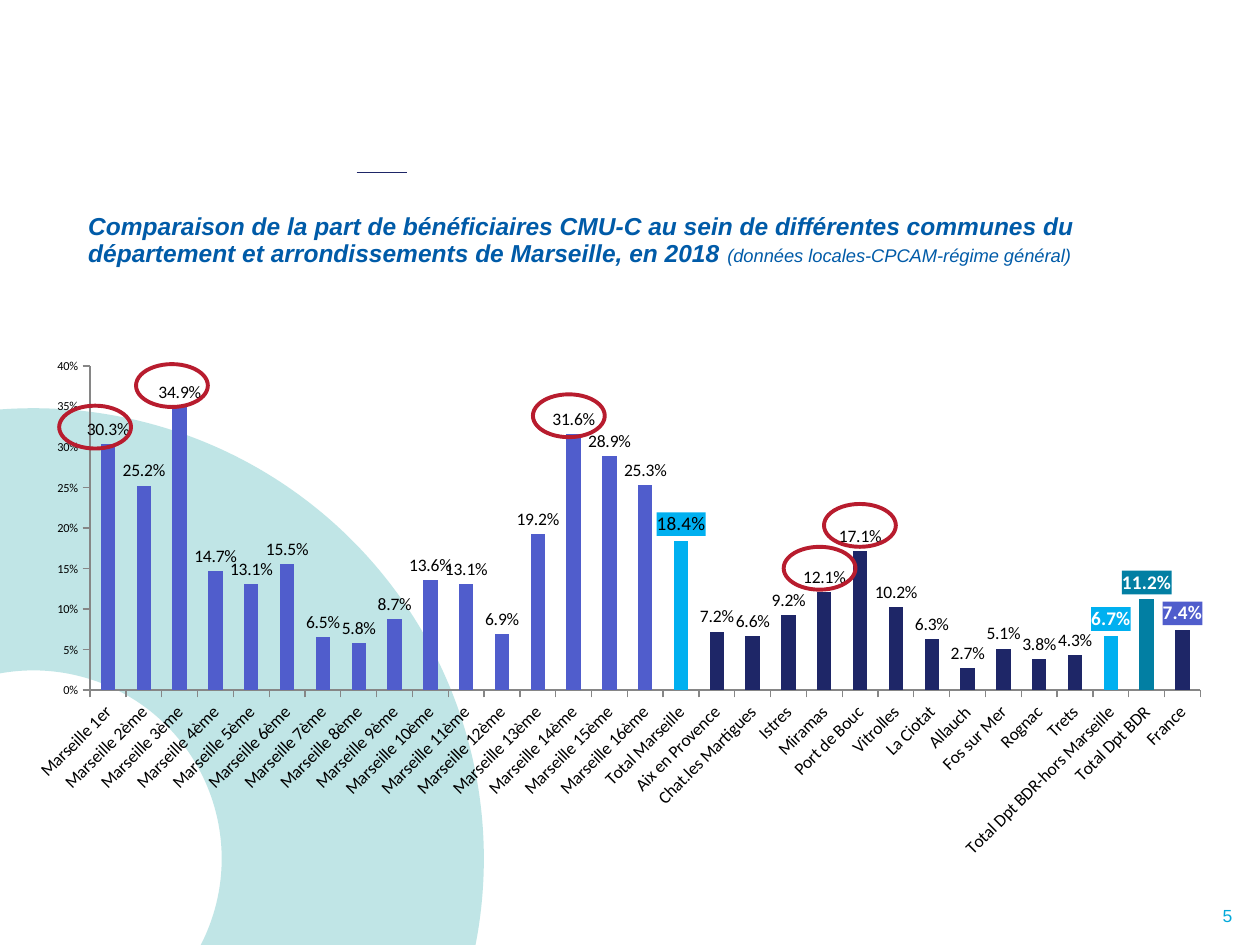
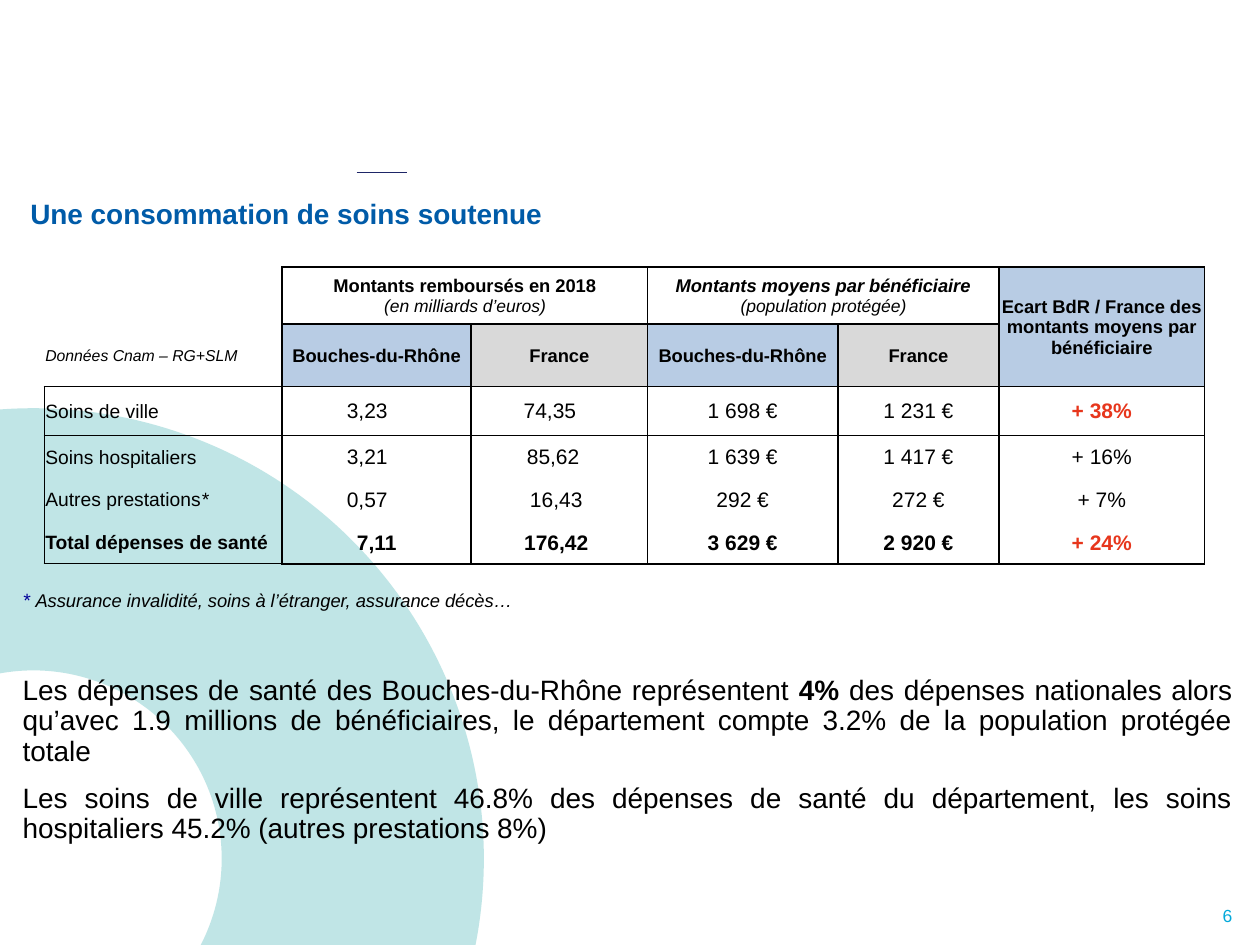
from lxml import etree
from pptx import Presentation
from pptx.chart.data import CategoryChartData
from pptx.dml.color import RGBColor
from pptx.enum.chart import XL_CHART_TYPE, XL_LABEL_POSITION, XL_TICK_MARK
from pptx.enum.shapes import MSO_CONNECTOR, MSO_SHAPE
from pptx.enum.text import MSO_ANCHOR, MSO_AUTO_SIZE, PP_ALIGN
from pptx.oxml.ns import qn
from pptx.util import Inches, Pt

COLUMNS = XL_CHART_TYPE.COLUMN_CLUSTERED
OUTSIDE_END = XL_LABEL_POSITION.OUTSIDE_END
TICK_OUT, TICK_NONE = XL_TICK_MARK.OUTSIDE, XL_TICK_MARK.NONE
DONUT, OVAL, STRAIGHT = MSO_SHAPE.DONUT, MSO_SHAPE.OVAL, MSO_CONNECTOR.STRAIGHT
TOP, MIDDLE, NO_FIT = MSO_ANCHOR.TOP, MSO_ANCHOR.MIDDLE, MSO_AUTO_SIZE.NONE
LEFT, CENTER, RIGHT, JUSTIFY = PP_ALIGN.LEFT, PP_ALIGN.CENTER, PP_ALIGN.RIGHT, PP_ALIGN.JUSTIFY

THEME = {
    "font": "Arial", "chart_font": "Calibri",
    "black": "000000", "white": "FFFFFF", "title": "005BA8", "page": "03A9DA",
    "ring": "5EBEBF", "navy": "1E2667", "district": "505DCC", "total": "00B0F0",
    "department": "027FA3", "circle": "B81C2E", "axis": "868686",
    "blue_cell": "B8CCE4", "grey_cell": "D9D9D9", "alert": "E7361C", "star": "000099",
    "heading": 16, "chart_title": 14, "body": 16, "value": 12, "label": 11,
    "header": 10.5, "small": 10, "source": 9, "axis_size": 7,
}


def rgb(key):
    return RGBColor.from_string(THEME[key])


def write(paragraph, runs, **paragraph_format):
    for attribute, value in paragraph_format.items():
        setattr(paragraph, attribute, value)
    for text, size, color, style in runs:
        run = paragraph.add_run()
        run.text = text
        run.font.color.rgb = rgb(color)
        settings = {"name": THEME["font"], "size": Pt(THEME[size]), "bold": "b" in style, "italic": "i" in style}
        for attribute, value in settings.items():
            setattr(run.font, attribute, value)


prs = Presentation()
prs.slide_width, prs.slide_height = Inches(10), Inches(7.5)
chart_slide = prs.slides.add_slide(prs.slide_layouts[5])
spending_slide = prs.slides.add_slide(prs.slide_layouts[1])

ring = chart_slide.shapes.add_shape(DONUT, Inches(-3.31), Inches(3.24), Inches(7.15), Inches(7.15))
ring.adjustments[0] = 0.291
ring.shadow.inherit = False
ring.line.fill.background()
ring.fill.solid()
ring.fill.fore_color.rgb = rgb("ring")
ring_color = ring._element.spPr.find(qn("a:solidFill"))[0]
etree.SubElement(ring_color, qn("a:alpha"), val="39000")

dash = chart_slide.shapes.add_connector(STRAIGHT, Inches(2.83), Inches(1.37), Inches(3.23), Inches(1.37))
dash.line.color.rgb = rgb("navy")
dash.line.width = Pt(1)
etree.SubElement(dash._element.spPr, qn("a:effectLst"))

master_tree = prs.slide_master.element.cSld.spTree
for shape_id, decoration in enumerate((ring, dash), start=100):
    decoration._element.xpath(".//p:cNvPr")[0].set("id", str(shape_id))
    master_tree.append(decoration._element)

comparison_title = chart_slide.shapes.title
spending_title, spending_body = spending_slide.placeholders
for holder, box, anchor in (
    (comparison_title, (0.7, 1.49, 8.89, 0.85), MIDDLE),
    (spending_title, (0.24, 1.56, 9.5, 0.3), MIDDLE),
    (spending_body, (0.18, 4.69, 9.6, 2.6), TOP),
):
    holder.left, holder.top, holder.width, holder.height = map(Inches, box)
    frame_format = {"margin_left": 0, "margin_right": 0, "margin_top": 0, "margin_bottom": 0,
                    "word_wrap": True, "auto_size": NO_FIT, "vertical_anchor": anchor}
    for attribute, value in frame_format.items():
        setattr(holder.text_frame, attribute, value)

write(comparison_title.text_frame.paragraphs[0], [
    ("Comparaison de la part de bénéficiaires CMU-C au sein de différentes communes du "
     "département et arrondissements de Marseille, en 2018 ", "chart_title", "title", "bi"),
    ("(données locales-CPCAM-régime général)", "header", "title", "i"),
], alignment=LEFT, line_spacing=0.9)

districts = ["Marseille 1er"] + [f"Marseille {number}ème" for number in range(2, 17)]
towns = ["Aix en Provence", "Chat.les Martigues", "Istres", "Miramas", "Port de Bouc", "Vitrolles",
         "La Ciotat", "Allauch", "Fos sur Mer", "Rognac", "Trets"]
shares = CategoryChartData(number_format="0.0%")
shares.categories = districts + ["Total Marseille"] + towns + [
    "Total Dpt BDR-hors Marseille", "Total Dpt BDR", "France"]
shares.add_series("Part CMU-C", [
    0.303, 0.252, 0.349, 0.147, 0.131, 0.155, 0.065, 0.058, 0.087, 0.136, 0.131, 0.069, 0.192, 0.316,
    0.289, 0.253, 0.184, 0.072, 0.066, 0.092, 0.121, 0.171, 0.102, 0.063, 0.027, 0.051, 0.038, 0.043,
    0.067, 0.112, 0.074])
chart = chart_slide.shapes.add_chart(
    COLUMNS, Inches(0.09), Inches(2.76), Inches(9.62), Inches(4.13), shares).chart
chart.has_legend = False
chart.has_title = False
chart.font.name, chart.font.size = THEME["chart_font"], Pt(THEME["small"])
chart.font.color.rgb = rgb("black")

plot_area = chart._chartSpace.chart.plotArea
for old_layout in plot_area.findall(qn("c:layout")):
    plot_area.remove(old_layout)
layout = etree.Element(qn("c:layout"))
plot_area.insert(0, layout)
manual = etree.SubElement(layout, qn("c:manualLayout"))
for tag, value in (("layoutTarget", "inner"), ("xMode", "edge"), ("yMode", "edge"),
                   ("x", "0.065"), ("y", "0.035"), ("w", "0.916"), ("h", "0.623")):
    etree.SubElement(manual, qn(f"c:{tag}"), val=value)

for axis in (chart.category_axis, chart.value_axis):
    axis.has_major_gridlines = False
    axis.major_tick_mark, axis.minor_tick_mark = TICK_OUT, TICK_NONE
    axis.format.line.color.rgb = rgb("axis")
    axis.format.line.width = Pt(0.75)
towns_axis, share_axis = chart.category_axis, chart.value_axis
towns_axis.tick_labels.font.size = Pt(THEME["small"])
towns_axis._element.xpath("c:txPr/a:bodyPr")[0].set("rot", "-2700000")
share_axis.minimum_scale, share_axis.maximum_scale, share_axis.major_unit = 0, 0.4, 0.05
share_axis.tick_labels.font.size = Pt(THEME["axis_size"])
share_axis.tick_labels.number_format = "0%"
share_axis.tick_labels.number_format_is_linked = False

plot = chart.plots[0]
plot.vary_by_categories = False
plot.gap_width = 150
bars = plot.series[0]
bars.format.fill.solid()
bars.format.fill.fore_color.rgb = rgb("navy")
bar_colors = {index: "district" for index in range(len(districts))}
bar_colors.update({16: "total", 28: "total", 29: "department"})
for index, color in bar_colors.items():
    bar_fill = bars.points[index].format.fill
    bar_fill.solid()
    bar_fill.fore_color.rgb = rgb(color)

labels = bars.data_labels
labels.show_value = True
labels.number_format, labels.number_format_is_linked = "0.0%", False
labels.position = OUTSIDE_END
for index, background, color in ((16, "total", "black"), (28, "total", "white"),
                                 (29, "department", "white"), (30, "district", "white")):
    label = bars.points[index].data_label
    label.font.size, label.font.bold = Pt(THEME["label"]), color == "white"
    label.font.color.rgb = rgb(color)
    label.position = OUTSIDE_END
    text_properties = label._dLbl.find(qn("c:txPr"))
    number_format = etree.Element(qn("c:numFmt"), formatCode="0.0%", sourceLinked="0")
    label_shape = etree.Element(qn("c:spPr"))
    label_fill = etree.SubElement(label_shape, qn("a:solidFill"))
    etree.SubElement(label_fill, qn("a:srgbClr"), val=THEME[background])
    text_properties.addprevious(number_format)
    text_properties.addprevious(label_shape)

for left, top in ((0.47, 3.22), (1.08, 2.89), (4.23, 3.13), (6.22, 4.34), (6.54, 4)):
    circle = chart_slide.shapes.add_shape(OVAL, Inches(left), Inches(top), Inches(0.57), Inches(0.34))
    circle.shadow.inherit = False
    circle.fill.background()
    circle.line.color.rgb = rgb("circle")
    circle.line.width = Pt(2.25)

write(spending_title.text_frame.paragraphs[0],
      [("Une consommation de soins soutenue", "heading", "title", "b")], alignment=LEFT, line_spacing=0.9)

commentary = (
    (LEFT, 0, [("* ", "label", "star", "i"),
               ("Assurance invalidité, soins à l’étranger, assurance décès…", "header", "black", "i")]),
    (JUSTIFY, 37, [("Les dépenses de santé des Bouches-du-Rhône représentent ", "body", "black", ""),
                   ("4% ", "body", "black", "b"),
                   ("des dépenses nationales alors qu’avec 1.9 millions de bénéficiaires, le département "
                    "compte 3.2% de la population protégée totale", "body", "black", "")]),
    (JUSTIFY, 10, [("Les soins de ville représentent 46.8% des dépenses de santé du département, "
                    "les soins hospitaliers 45.2% (autres prestations 8%)", "body", "black", "")]),
)
body_frame = spending_body.text_frame
for index, (alignment, gap, runs) in enumerate(commentary):
    paragraph = body_frame.add_paragraph() if index else body_frame.paragraphs[0]
    properties = paragraph._p.get_or_add_pPr()
    properties.set("marL", "0")
    properties.set("indent", "0")
    etree.SubElement(properties, qn("a:buNone"))
    write(paragraph, runs, alignment=alignment, line_spacing=0.9, space_before=Pt(gap))

column_widths = (1.89, 1.5, 1.4, 1.51, 1.28, 1.63)
row_heights = (0.45, 0.47, 0.39, 0.34, 0.34, 0.34)
table_frame = spending_slide.shapes.add_table(
    6, 6, Inches(0.35), Inches(2.12), Inches(sum(column_widths)), Inches(sum(row_heights)))
table = table_frame.table
table._tbl.tblPr.find(qn("a:tableStyleId")).text = "{2D5ABB26-0587-4C30-8999-92F81FD0307C}"
table.first_row = table.horz_banding = False
for column, width in zip(table.columns, column_widths):
    column.width = Inches(width)
for row, height in zip(table.rows, row_heights):
    row.height = Inches(height)
for start, end in (((0, 1), (0, 2)), ((0, 3), (0, 4)), ((0, 5), (1, 5))):
    table.cell(*start).merge(table.cell(*end))

contents = {
    (0, 1): [[("Montants remboursés en 2018", "header", "black", "b")],
             [("(en milliards d’euros)", "small", "black", "i")]],
    (0, 3): [[("Montants moyens par bénéficiaire", "header", "black", "bi")],
             [("(population protégée)", "small", "black", "i")]],
    (0, 5): [[("Ecart BdR / France des montants moyens par bénéficiaire", "header", "black", "b")]],
    (1, 0): [[("Données Cnam – RG+SLM", "source", "black", "i")]],
}
for column in range(1, 5):
    area = "Bouches-du-Rhône" if column % 2 else "France"
    contents[1, column] = [[(area, "header", "black", "b")]]
spending = (
    ("Soins de ville", "3,23", "74,35", "1 698 €", "1 231 €", "+ 38%"),
    ("Soins hospitaliers", "3,21", "85,62", "1 639 €", "1 417 €", "+ 16%"),
    ("Autres prestations", "0,57", "16,43", "292 €", "272 €", "+ 7%"),
    ("Total dépenses de santé", "7,11", "176,42", "3 629 €", "2 920 €", "+ 24%"),
)
for row, amounts in enumerate(spending, start=2):
    for column, amount in enumerate(amounts):
        alert = amount in ("+ 38%", "+ 24%")
        contents[row, column] = [[(amount, "value" if column else "label", "alert" if alert else "black",
                                   "b" if alert or row == 5 else "")]]
contents[4, 0][0].append(("*", "label", "black", "i"))

cell_fills = {(0, 5): "blue_cell", (1, 1): "blue_cell", (1, 2): "grey_cell",
              (1, 3): "blue_cell", (1, 4): "grey_cell"}
right_pads = {(2, 1): 0.15, (3, 1): 0.15, (4, 1): 0.15,
              (2, 2): 0.15, (3, 2): 0.1, (4, 2): 0.05, (5, 2): 0.05}
for row in range(6):
    for column in range(6):
        position = row, column
        cell = table.cell(row, column)
        cell_format = {"vertical_anchor": MIDDLE, "margin_left": Inches(0.01), "margin_top": Inches(0.01),
                       "margin_right": Inches(0.01 + right_pads.get(position, 0)), "margin_bottom": 0}
        for attribute, value in cell_format.items():
            setattr(cell, attribute, value)
        if position in cell_fills:
            cell.fill.solid()
            cell.fill.fore_color.rgb = rgb(cell_fills[position])
        else:
            cell.fill.background()
        for index, runs in enumerate(contents.get(position, [])):
            paragraph = cell.text_frame.add_paragraph() if index else cell.text_frame.paragraphs[0]
            write(paragraph, runs, alignment=CENTER if column else LEFT)
        sides = {"L": column > 0 or row > 1, "R": True,
                 "T": row == 2 or (row < 2 and column > 0),
                 "B": row in (1, 5) or (row == 0 and column > 0)}
        cell_properties = cell._tc.get_or_add_tcPr()
        for index, side in enumerate(side for side, drawn in sides.items() if drawn):
            width = Pt(0.5) if column == 0 and side != "R" else Pt(1)
            border = etree.Element(qn(f"a:ln{side}"), w=str(width))
            border_fill = etree.SubElement(border, qn("a:solidFill"))
            etree.SubElement(border_fill, qn("a:srgbClr"), val=THEME["black"])
            cell_properties.insert(index, border)

for page, slide in enumerate(prs.slides, start=5):
    number_frame = slide.shapes.add_textbox(Inches(8.71), Inches(7.18), Inches(1.07), Inches(0.32)).text_frame
    number_frame.word_wrap = True
    for side in ("left", "right", "top", "bottom"):
        setattr(number_frame, f"margin_{side}", 0)
    write(number_frame.paragraphs[0], [(str(page), "small", "page", "")], alignment=RIGHT)

prs.save("out.pptx")
